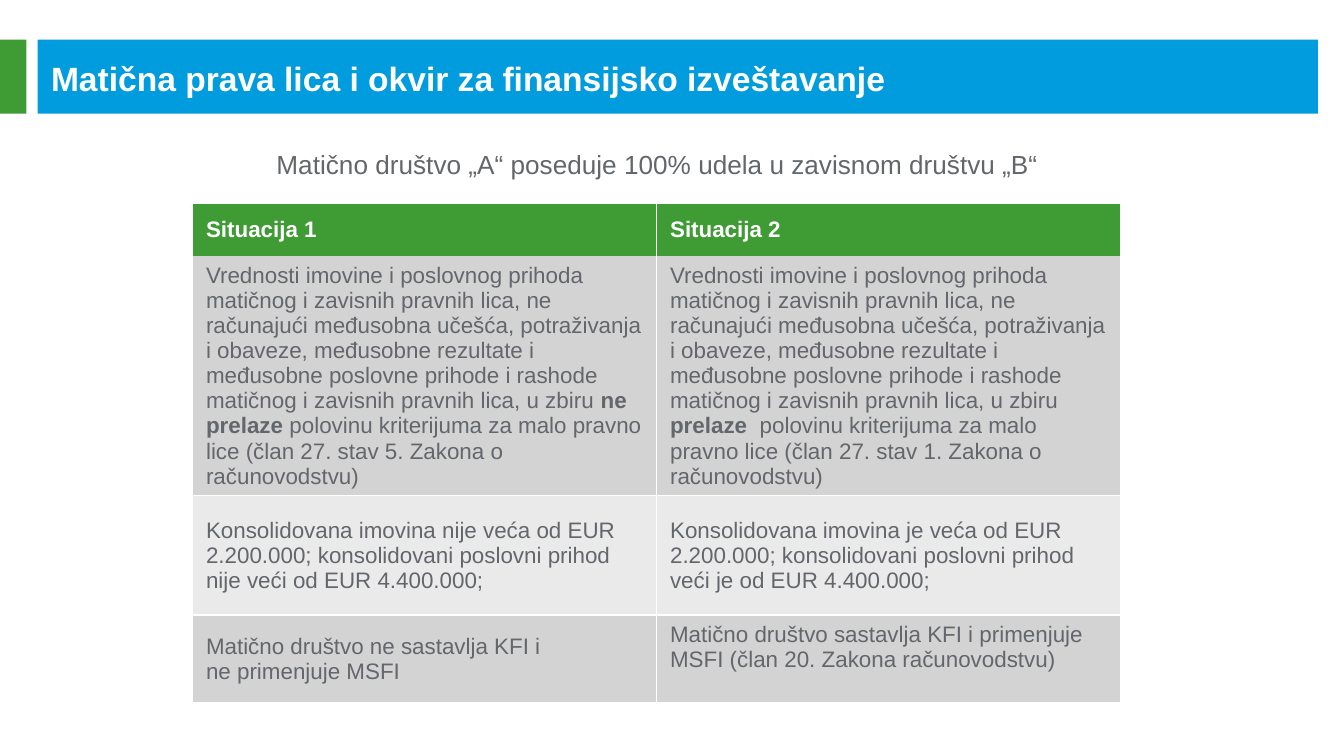
from dataclasses import dataclass

import pptx
import pptx.dml.color
import pptx.enum.shapes
import pptx.enum.text
import pptx.oxml
import pptx.oxml.ns
import pptx.util

Cm = pptx.util.Cm
Align = pptx.enum.text.PP_ALIGN
Anchor = pptx.enum.text.MSO_ANCHOR


@dataclass
class Theme:
    font: str = "Arial"
    white: str = "FFFFFF"
    blue: str = "009CDE"
    green: str = "3F9C35"
    ink: str = "63666A"
    dark: str = "D3D3D4"
    light: str = "EAEAEB"
    head: int = 18
    lead: int = 14
    body: int = 12


class Deck:
    def __init__(self, theme):
        self.theme = theme
        self.show = pptx.Presentation()
        self.show.slide_width = Cm(25.4)
        self.show.slide_height = Cm(14.28)
        self.slide = self.show.slides.add_slide(self.show.slide_layouts[5])

    def paint(self, fill, tint):
        fill.solid()
        fill.fore_color.rgb = pptx.dml.color.RGBColor.from_string(tint)

    def add_runs(self, para, runs, size, tint):
        for text, bold in runs:
            run = para.add_run()
            run.text = text
            font = run.font
            font.name = self.theme.font
            font.size = pptx.util.Pt(size)
            font.bold = bold
            self.paint(font.fill, tint)

    def rect(self, x, y, w, h, tint):
        kind = pptx.enum.shapes.MSO_SHAPE.RECTANGLE
        shape = self.slide.shapes.add_shape(kind, Cm(x), Cm(y), Cm(w), Cm(h))
        shape.shadow.inherit = False
        shape.line.fill.background()
        self.paint(shape.fill, tint)
        return shape

    def title(self, x, y, w, h, text):
        shape = self.slide.shapes.title
        shape.left, shape.top, shape.width, shape.height = Cm(x), Cm(y), Cm(w), Cm(h)
        shape.element.getparent().append(shape.element)
        frame = shape.text_frame
        frame.auto_size = pptx.enum.text.MSO_AUTO_SIZE.NONE
        frame.vertical_anchor = Anchor.MIDDLE
        para = frame.paragraphs[0]
        para.alignment = Align.LEFT
        self.add_runs(para, [(text, True)], self.theme.head, self.theme.white)

    def lead(self, x, y, w, h, text):
        frame = self.rect(x, y, w, h, self.theme.white).text_frame
        frame.word_wrap = True
        frame.vertical_anchor = Anchor.MIDDLE
        para = frame.paragraphs[0]
        para.alignment = Align.CENTER
        self.add_runs(para, [(text, False)], self.theme.lead, self.theme.ink)

    def edge(self, cell, bare):
        props = cell._tc.get_or_add_tcPr()
        for side in "LRTB":
            paint = "<a:noFill/>" if side == bare else (
                f'<a:solidFill><a:srgbClr val="{self.theme.white}"/></a:solidFill>')
            props.append(pptx.oxml.parse_xml(
                f'<a:ln{side} {pptx.oxml.ns.nsdecls("a")} w="12700">{paint}</a:ln{side}>'))

    def table(self, x, y, wide, highs, rows):
        theme = self.theme
        count = len(rows[0])
        frame = self.slide.shapes.add_table(
            len(rows), count, Cm(x), Cm(y), Cm(wide * count), Cm(sum(highs)))
        grid = frame.table
        grid.horz_banding = False
        for col in grid.columns:
            col.width = Cm(wide)
        for r, (high, row) in enumerate(zip(highs, rows)):
            grid.rows[r].height = Cm(high)
            back = theme.green if r == 0 else theme.dark if r % 2 else theme.light
            for c, runs in enumerate(row):
                cell = grid.cell(r, c)
                cell.vertical_anchor = Anchor.MIDDLE
                self.edge(cell, {0: "B", 1: "T"}.get(r))
                self.paint(cell.fill, back)
                self.add_runs(cell.text_frame.paragraphs[0], runs, theme.body,
                              theme.ink if r else theme.white)
        return grid


def main():
    theme = Theme()
    deck = Deck(theme)
    deck.rect(0.71, 0.75, 24.2, 1.4, theme.blue)
    deck.rect(0, 0.75, 0.5, 1.4, theme.green)
    deck.title(0.71, 0.79, 24, 1.35,
               "Matična prava lica i okvir za finansijsko izveštavanje")

    worth = ("Vrednosti imovine i poslovnog prihoda matičnog i zavisnih pravnih lica, "
             "ne računajući međusobna učešća, potraživanja i obaveze, međusobne "
             "rezultate i međusobne poslovne prihode i rashode matičnog i zavisnih "
             "pravnih lica, u zbiru ")
    half = "polovinu kriterijuma za malo pravno lice (član 27. stav {}. Zakona o računovodstvu)"
    rows = [
        [[("Situacija 1", True)], [("Situacija 2", True)]],
        [[(worth, False), ("ne prelaze ", True), (half.format(5), False)],
         [(worth, False), ("prelaze ", True), (" " + half.format(1), False)]],
        [[("Konsolidovana imovina nije veća od EUR 2.200.000; konsolidovani "
           "poslovni prihod nije veći od EUR 4.400.000;", False)],
         [("Konsolidovana imovina je veća od EUR 2.200.000; konsolidovani "
           "poslovni prihod veći je od EUR 4.400.000;", False)]],
        [[("Matično društvo ne sastavlja KFI i ne primenjuje MSFI", False)],
         [("Matično društvo sastavlja KFI i primenjuje MSFI "
           "(član 20. Zakona računovodstvu)", False)]],
    ]
    grid = deck.table(3.64, 3.84, 8.77, [1, 4.5, 2.26, 1.65], rows)
    grid.cell(3, 0).margin_right = Cm(2)
    grid.cell(3, 1).margin_bottom = Cm(0.58)
    deck.lead(3.66, 2.36, 17.53, 1.47,
              "Matično društvo „A“ poseduje 100% udela u zavisnom društvu „B“")
    deck.show.save("out.pptx")


if __name__ == "__main__":
    main()
